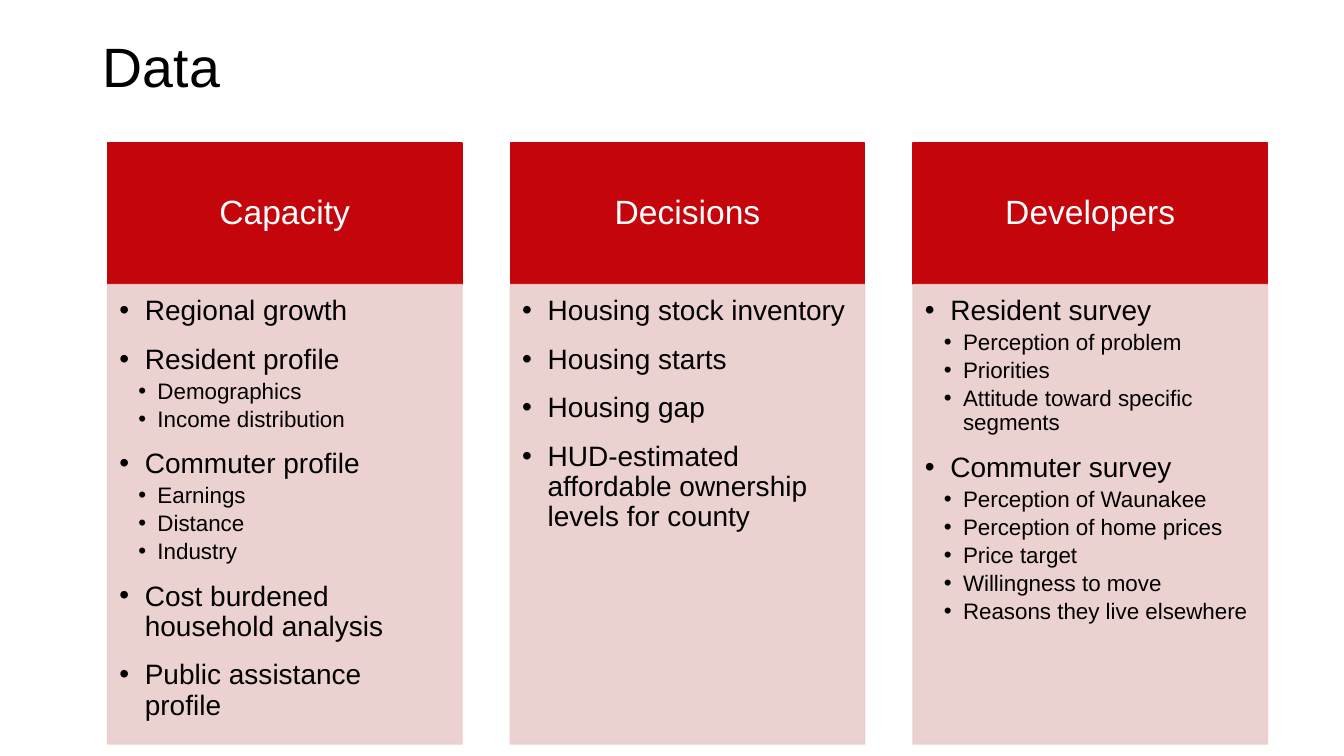
from dataclasses import dataclass

from pptx import Presentation
from pptx.dml.color import RGBColor
from pptx.enum.shapes import MSO_SHAPE
from pptx.enum.text import MSO_ANCHOR, PP_ALIGN
from pptx.oxml.ns import qn
from pptx.oxml.xmlchemy import OxmlElement
from pptx.util import Cm, Pt


@dataclass(frozen=True)
class Theme:
    """Colours, font and type sizes of the slide."""
    font: str = "Arial"
    red: str = "C5050C"
    pink: str = "EACCCC"
    black: str = "000000"
    white: str = "FFFFFF"
    title: float = 39.6
    heading: float = 24
    topic: float = 20
    detail: float = 16


THEME = Theme()

COLUMNS = [
    ("Capacity", [
        ("Regional growth", []),
        ("Resident profile", ["Demographics", "Income distribution"]),
        ("Commuter profile", ["Earnings", "Distance", "Industry"]),
        ("Cost burdened household analysis", []),
        ("Public assistance profile", []),
    ]),
    ("Decisions", [
        ("Housing stock inventory", []),
        ("Housing starts", []),
        ("Housing gap", []),
        ("HUD-estimated affordable ownership levels for county", []),
    ]),
    ("Developers", [
        ("Resident survey", [
            "Perception of problem", "Priorities",
            "Attitude toward specific segments"]),
        ("Commuter survey", [
            "Perception of Waunakee", "Perception of home prices",
            "Price target", "Willingness to move",
            "Reasons they live elsewhere"]),
    ]),
]


def write(paragraph, text, size, color, align=PP_ALIGN.LEFT):
    """Set the text of a paragraph and format its runs."""
    paragraph.text = text
    paragraph.alignment = align
    paragraph.line_spacing = 0.9
    for span in paragraph.runs:
        span.font.name = THEME.font
        span.font.size = Pt(size)
        span.font.color.rgb = RGBColor.from_string(color)


def add_bullet(paragraph, margin, hanging):
    """Give a paragraph a round bullet with a hanging indent."""
    properties = paragraph._p.get_or_add_pPr()
    properties.set("marL", str(margin))
    properties.set("indent", str(-hanging))
    for tag, name, value in (("a:buFont", "typeface", THEME.font),
                             ("a:buChar", "char", "•")):
        element = OxmlElement(tag)
        element.set(name, value)
        properties.append(element)


def set_opacity(box, percent):
    """Make the fill and line of a box partly transparent."""
    for color in box.element.spPr.iter(qn("a:srgbClr")):
        alpha = OxmlElement("a:alpha")
        alpha.set("val", str(percent * 1000))
        color.append(alpha)


def add_box(page, left, top, height, color, anchor, insets):
    """Add a plain column-wide rectangle and return it."""
    box = page.shapes.add_shape(
        MSO_SHAPE.RECTANGLE, left, top, Cm(8.93), height)
    box.shadow.inherit = False
    box.fill.solid()
    box.fill.fore_color.rgb = RGBColor.from_string(color)
    box.line.color.rgb = RGBColor.from_string(color)
    box.line.width = Pt(1)
    frame = box.text_frame
    frame.word_wrap = True
    frame.vertical_anchor = anchor
    (frame.margin_left, frame.margin_top,
     frame.margin_right, frame.margin_bottom) = map(Cm, insets)
    return box


def add_topics(frame, topics):
    """Write topics with their details as a two-level bullet list."""
    for number, (topic, details) in enumerate(topics):
        para = frame.add_paragraph() if number else frame.paragraphs[0]
        add_bullet(para, Cm(0.64), Cm(0.64))
        write(para, topic, THEME.topic, THEME.black)
        para.space_before = Pt(9.7 if number else 0)
        para.space_after = Pt(3.4)
        for detail in details:
            para = frame.add_paragraph()
            para.level = 1
            add_bullet(para, Cm(0.96), Cm(0.48))
            write(para, detail, THEME.detail, THEME.black)
            para.space_before = Pt(0)
            para.space_after = Pt(2.7)


def add_column(page, left, heading, topics):
    """Add a red heading above a pink list of topics."""
    head = add_box(page, left, Cm(3.6), Cm(3.57), THEME.red,
                   MSO_ANCHOR.MIDDLE, (0.48, 0.28, 0.48, 0.28))
    write(head.text_frame.paragraphs[0], heading, THEME.heading,
          THEME.white, PP_ALIGN.CENTER)
    body = add_box(page, left, Cm(7.17), Cm(11.58), THEME.pink,
                   MSO_ANCHOR.TOP, (0.3, 0.3, 0.41, 0.43))
    set_opacity(body, 90)
    add_topics(body.text_frame, topics)


def set_title(page, text):
    """Place and format the title placeholder."""
    title = page.shapes.title
    title.left, title.top = Cm(2.34), Cm(0.91)
    title.width, title.height = Cm(29.21), Cm(1.7)
    title.text_frame.vertical_anchor = MSO_ANCHOR.MIDDLE
    write(title.text_frame.paragraphs[0], text, THEME.title, THEME.black)


def main():
    """Build the slide and save the deck."""
    deck = Presentation()
    deck.slide_width, deck.slide_height = Cm(33.87), Cm(19.05)
    page = deck.slides.add_slide(deck.slide_layouts.get_by_name("Title Only"))
    set_title(page, "Data")
    for number, (heading, topics) in enumerate(COLUMNS):
        add_column(page, Cm(2.71 + 10.15 * number), heading, topics)
    deck.save("out.pptx")


if __name__ == "__main__":
    main()
